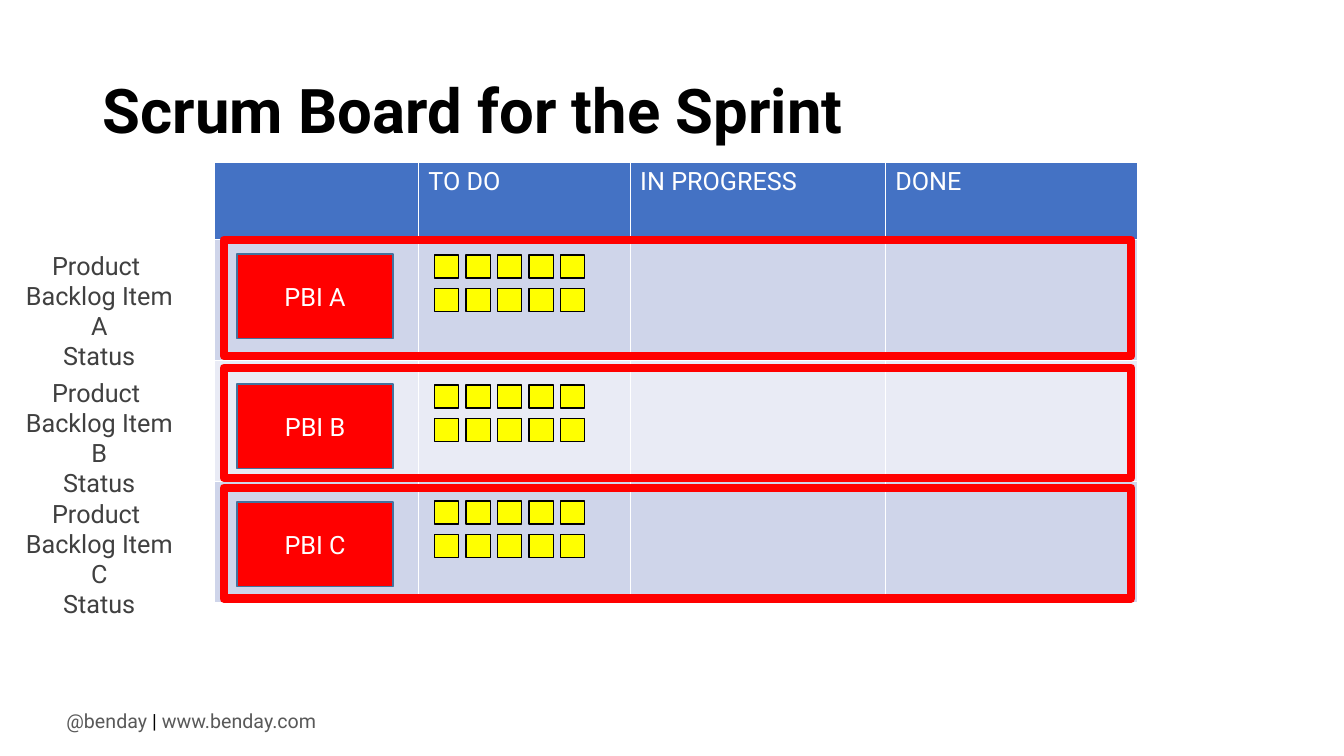
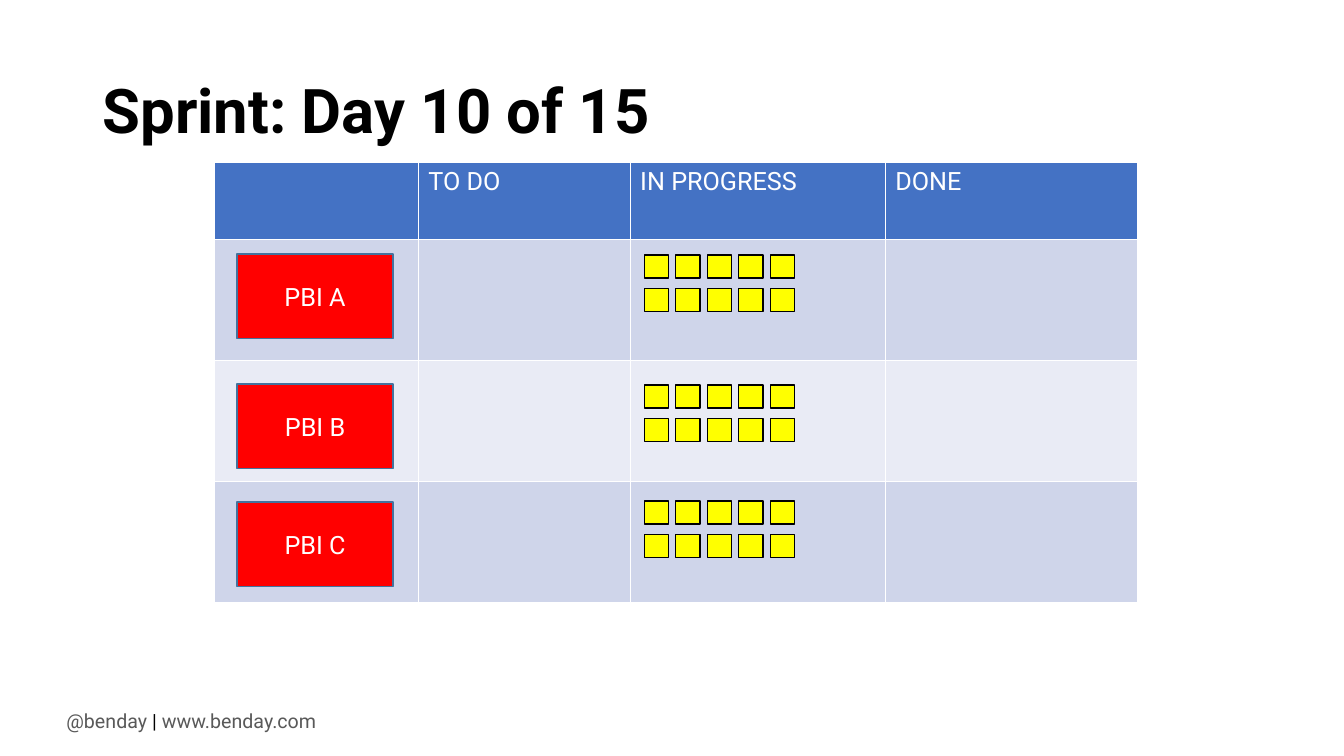
import itertools
from dataclasses import dataclass
from typing import Any, Optional

import lxml.etree
import pptx
import pptx.dml.color
import pptx.enum.shapes
import pptx.enum.text
import pptx.oxml
import pptx.oxml.ns
import pptx.util

Inches = pptx.util.Inches
Pt = pptx.util.Pt
RGBColor = pptx.dml.color.RGBColor
Align = pptx.enum.text.PP_ALIGN
Anchor = pptx.enum.text.MSO_ANCHOR

BLACK = RGBColor(0x00, 0x00, 0x00)
WHITE = RGBColor(0xFF, 0xFF, 0xFF)
RED = RGBColor(0xFF, 0x00, 0x00)
YELLOW = RGBColor(0xFF, 0xFF, 0x00)
HEADER_BLUE = RGBColor(0x44, 0x72, 0xC4)
EDGE_BLUE = RGBColor(0x43, 0x73, 0x9E)
BAND_DARK = RGBColor(0xCF, 0xD5, 0xEA)
BAND_LIGHT = RGBColor(0xE9, 0xEB, 0xF5)
FOOTER_GREY = RGBColor(0x59, 0x59, 0x59)
LABEL_GREY = RGBColor(0x40, 0x40, 0x40)

FONT = "Roboto"
TITLE_FORMAT = {"size": Pt(44), "bold": True}
BODY_FORMAT = {"size": Pt(18), "bold": False}
FOOTER_FORMAT = {"size": Pt(14), "bold": False}

HEADINGS = ("", "TO DO", "IN PROGRESS", "DONE")
COLUMN_WIDTHS = (2.02, 2.1, 2.53, 2.5)
HEADER_HEIGHT = 0.77
ROW_HEIGHT = 1.2
ROW_FILLS = (HEADER_BLUE, BAND_DARK, BAND_LIGHT, BAND_DARK)
BOARD_LEFT, BOARD_TOP = 2.13, 1.61

TASK_COLUMNS, TASK_ROWS = 5, 2
TASK_WIDTH, TASK_HEIGHT = 0.24, 0.23
TASK_STEP_X = 1.25 / (TASK_COLUMNS - 1)
TASK_STEP_Y = 0.33


@dataclass(frozen=True)
class Box:
    left: float
    top: float
    width: float
    height: float

    def lengths(self) -> list[int]:
        return [Inches(n) for n in (self.left, self.top, self.width, self.height)]


@dataclass(frozen=True)
class BacklogItem:
    letter: str
    card_top: float
    tasks_top: float
    lane: Box
    label_top: float


@dataclass(frozen=True)
class SprintDay:
    title: str
    tasks_left: float
    show_lanes: bool


ITEMS = (
    BacklogItem("A", 2.52, 2.53, Box(2.22, 2.38, 9, 1.15), 2.43),
    BacklogItem("B", 3.81, 3.82, Box(2.22, 3.65, 9, 1.09), 3.69),
    BacklogItem("C", 4.98, 4.97, Box(2.22, 4.84, 9, 1.1), 4.89),
)

DAYS = (
    SprintDay("Scrum Board for the Sprint", 4.31, True),
    SprintDay("Sprint: Day 10 of 15", 6.39, False),
)


def style_font(font: Any, formats: dict[str, Any], color: RGBColor) -> None:
    for attribute, value in {"name": FONT, **formats}.items():
        setattr(font, attribute, value)
    font.color.rgb = color


def add_text(slide: Any, box: Box, runs: list[tuple[str, RGBColor]],
             formats: dict[str, Any], frame_formats: dict[str, Any],
             paragraph_formats: dict[str, Any]) -> None:
    frame = slide.shapes.add_textbox(*box.lengths()).text_frame
    paragraph = frame.paragraphs[0]
    for target, values in ((frame, frame_formats), (paragraph, paragraph_formats)):
        for attribute, value in values.items():
            setattr(target, attribute, value)
    for text, color in runs:
        for index, line in enumerate(text.split("\n")):
            if index:
                paragraph.add_line_break()
            run = paragraph.add_run()
            run.text = line
            style_font(run.font, formats, color)


def add_rectangle(slide: Any, box: Box, fill: Optional[RGBColor],
                  edge: RGBColor, edge_width: float = 1, text: str = "") -> None:
    rectangle = slide.shapes.add_shape(
        pptx.enum.shapes.MSO_SHAPE.RECTANGLE, *box.lengths())
    rectangle.shadow.inherit = False
    if fill is None:
        rectangle.fill.background()
    else:
        rectangle.fill.solid()
        rectangle.fill.fore_color.rgb = fill
    rectangle.line.color.rgb = edge
    rectangle.line.width = Pt(edge_width)
    if text:
        rectangle.text_frame.text = text
        rectangle.text_frame.vertical_anchor = Anchor.MIDDLE
        paragraph = rectangle.text_frame.paragraphs[0]
        paragraph.alignment = Align.CENTER
        style_font(paragraph.runs[0].font, BODY_FORMAT, WHITE)


def add_cell_borders(cell: Any) -> None:
    properties = cell._tc.get_or_add_tcPr()
    qn = pptx.oxml.ns.qn
    for index, side in enumerate(("a:lnL", "a:lnR", "a:lnT", "a:lnB")):
        border = lxml.etree.Element(qn(side), w=str(Pt(1)))
        fill = lxml.etree.SubElement(border, qn("a:solidFill"))
        lxml.etree.SubElement(fill, qn("a:srgbClr"), val=str(WHITE))
        properties.insert(index, border)


def add_board(slide: Any) -> None:
    row_heights = (HEADER_HEIGHT,) + (ROW_HEIGHT,) * len(ITEMS)
    box = Box(BOARD_LEFT, BOARD_TOP, sum(COLUMN_WIDTHS), sum(row_heights))
    board = slide.shapes.add_table(
        len(row_heights), len(HEADINGS), *box.lengths()).table
    board.first_row = False
    board.horz_banding = False
    for column, width in zip(board.columns, COLUMN_WIDTHS):
        column.width = Inches(width)
    for row, height, fill in zip(board.rows, row_heights, ROW_FILLS):
        row.height = Inches(height)
        for cell in row.cells:
            cell.fill.solid()
            cell.fill.fore_color.rgb = fill
            add_cell_borders(cell)
    for cell, heading in zip(board.rows[0].cells, HEADINGS):
        if heading:
            cell.text = heading
            style_font(cell.text_frame.paragraphs[0].runs[0].font, BODY_FORMAT, WHITE)


def add_tasks(slide: Any, left: float, top: float) -> None:
    for row, column in itertools.product(range(TASK_ROWS), range(TASK_COLUMNS)):
        task = Box(left + column * TASK_STEP_X, top + row * TASK_STEP_Y,
                   TASK_WIDTH, TASK_HEIGHT)
        add_rectangle(slide, task, YELLOW, BLACK)


def add_title_and_footer(slide: Any, title: str) -> None:
    add_text(slide, Box(0.56, 6.98, 2.69, 0.34),
             [("@benday", FOOTER_GREY), (" | ", BLACK), ("www.benday.com", FOOTER_GREY)],
             FOOTER_FORMAT, {"word_wrap": False}, {})
    add_text(slide, Box(0.92, 0.4, 11.5, 1.45), [(title, BLACK)], TITLE_FORMAT,
             {"word_wrap": True, "vertical_anchor": Anchor.MIDDLE},
             {"line_spacing": 0.9})


def build_slide(deck: Any, day: SprintDay) -> None:
    slide = deck.slides.add_slide(deck.slide_layouts[6])
    add_title_and_footer(slide, day.title)
    add_board(slide)
    for item in ITEMS:
        add_rectangle(slide, Box(2.35, item.card_top, 1.55, 0.84), RED, EDGE_BLUE,
                      text=f"PBI {item.letter}")
        add_tasks(slide, day.tasks_left, item.tasks_top)
        if day.show_lanes:
            add_rectangle(slide, item.lane, None, RED, 6)
            add_text(slide, Box(0.1, item.label_top, 1.77, 1.01),
                     [(f"Product \nBacklog Item {item.letter}\nStatus", LABEL_GREY)],
                     BODY_FORMAT, {"word_wrap": True}, {"alignment": Align.CENTER})


def main() -> None:
    deck = pptx.Presentation()
    deck.slide_width = Inches(13.33)
    deck.slide_height = Inches(7.5)
    for day in DAYS:
        build_slide(deck, day)
    deck.save("out.pptx")


if __name__ == "__main__":
    main()
